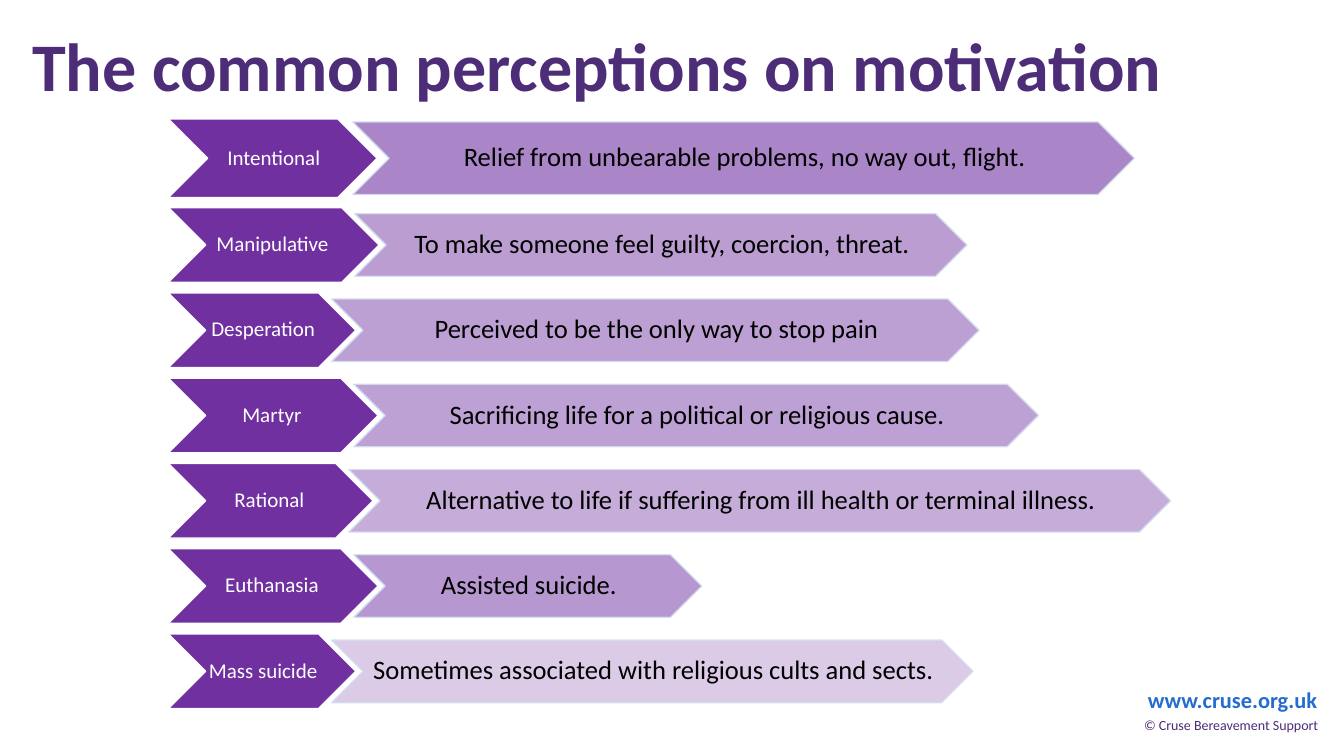
from lxml import etree
from pptx import Presentation
from pptx.dml.color import RGBColor
from pptx.enum.shapes import MSO_SHAPE
from pptx.enum.text import MSO_ANCHOR, MSO_AUTO_SIZE, PP_ALIGN
from pptx.oxml.ns import qn
from pptx.util import Inches, Pt

COLORS = {
    "heading": "4D2D78",
    "web": "256CD0",
    "purple": "7030A0",
    "white": "FFFFFF",
    "black": "000000",
    "outline": "D2DEEF",
}


def write(frame, text, size, color, align, bold=False):
    frame.word_wrap = True
    paragraph = frame.paragraphs[0]
    paragraph.text = text
    paragraph.alignment = align
    paragraph.font.name = "Calibri"
    paragraph.font.size = Pt(size)
    paragraph.font.bold = bold
    paragraph.font.color.rgb = RGBColor.from_string(COLORS[color])
    return paragraph


def add_chevron(box, text, size, text_color, outline, fill_alpha=100, line_alpha=100):
    chevron = slide.shapes.add_shape(MSO_SHAPE.CHEVRON, *[Inches(v) for v in box])
    chevron.shadow.inherit = False
    chevron.line.width = Pt(1)
    for paint, color, alpha in (
        (chevron.fill, "purple", fill_alpha),
        (chevron.line.fill, outline, line_alpha),
    ):
        paint.solid()
        paint.fore_color.rgb = RGBColor.from_string(COLORS[color])
    for solid, alpha in zip(
        chevron._element.spPr.iter(qn("a:solidFill")), (fill_alpha, line_alpha)
    ):
        if alpha < 100:
            etree.SubElement(solid[0], qn("a:alpha"), val=str(alpha * 1000))
    frame = chevron.text_frame
    frame.margin_left = Inches(0.02)
    frame.margin_right = 0
    frame.margin_top = frame.margin_bottom = Inches(0.01)
    frame.vertical_anchor = MSO_ANCHOR.MIDDLE
    write(frame, text, size, text_color, PP_ALIGN.CENTER).line_spacing = 0.9


prs = Presentation()
prs.slide_width = Inches(13.33)
prs.slide_height = Inches(7.5)
slide = prs.slides.add_slide(prs.slide_layouts[5])

title = slide.shapes.title
title.left, title.top = Inches(0.22), Inches(0.2)
title.width, title.height = Inches(12.31), Inches(0.97)
title.text_frame.auto_size = MSO_AUTO_SIZE.NONE
title.text_frame.vertical_anchor = MSO_ANCHOR.MIDDLE
heading = write(title.text_frame, "The common perceptions on motivation",
                48.6, "heading", PP_ALIGN.LEFT, True)
heading.line_spacing = 0.9

perceptions = [
    ("Intentional", 2.07, "Relief from unbearable problems, no way out, flight.", 7.75, 59),
    ("Manipulative ", 2.09, "To make someone feel guilty, coercion, threat.", 6.07, 47),
    ("Desperation", 1.86, "Perceived to be the only way to stop pain", 6.42, 46),
    ("Martyr ", 2.08, "Sacrificing life for a political or religious cause.", 6.79, 45),
    ("Rational ", 2.03, "Alternative to life if suffering from ill health or terminal illness.", 8.15, 40),
    ("Euthanasia ", 2.08, "Assisted suicide.", 3.45, 50),
    ("Mass suicide", 1.86, "Sometimes associated with religious cults and sects.", 6.36, 25),
]
label_left, overlap = 1.67, 0.24
second_top, last_top = 2.06, 6.29
pitch = (last_top - second_top) / (len(perceptions) - 2)

for row, (motive, motive_width, meaning, meaning_width, alpha) in enumerate(perceptions):
    if row == 0:
        top, motive_height, meaning_height = 1.18, 0.78, 0.72
    else:
        top, motive_height, meaning_height = second_top + (row - 1) * pitch, 0.74, 0.62
    add_chevron((label_left, top, motive_width, motive_height),
                motive, 15, "white", "white")
    meaning_left = label_left + motive_width - overlap
    meaning_top = top + (motive_height - meaning_height) / 2
    add_chevron((meaning_left, meaning_top, meaning_width, meaning_height),
                meaning, 19, "black", "outline", alpha, 90)

for box, text, size, color, bold in (
    ((11.26, 6.76, 1.93, 0.37), "www.cruse.org.uk", 16, "web", True),
    ((11.2, 7.06, 2.02, 0.27), "© Cruse Bereavement Support", 10, "heading", False),
):
    credit = slide.shapes.add_textbox(*[Inches(v) for v in box])
    write(credit.text_frame, text, size, color, PP_ALIGN.CENTER, bold)

prs.save("out.pptx")
